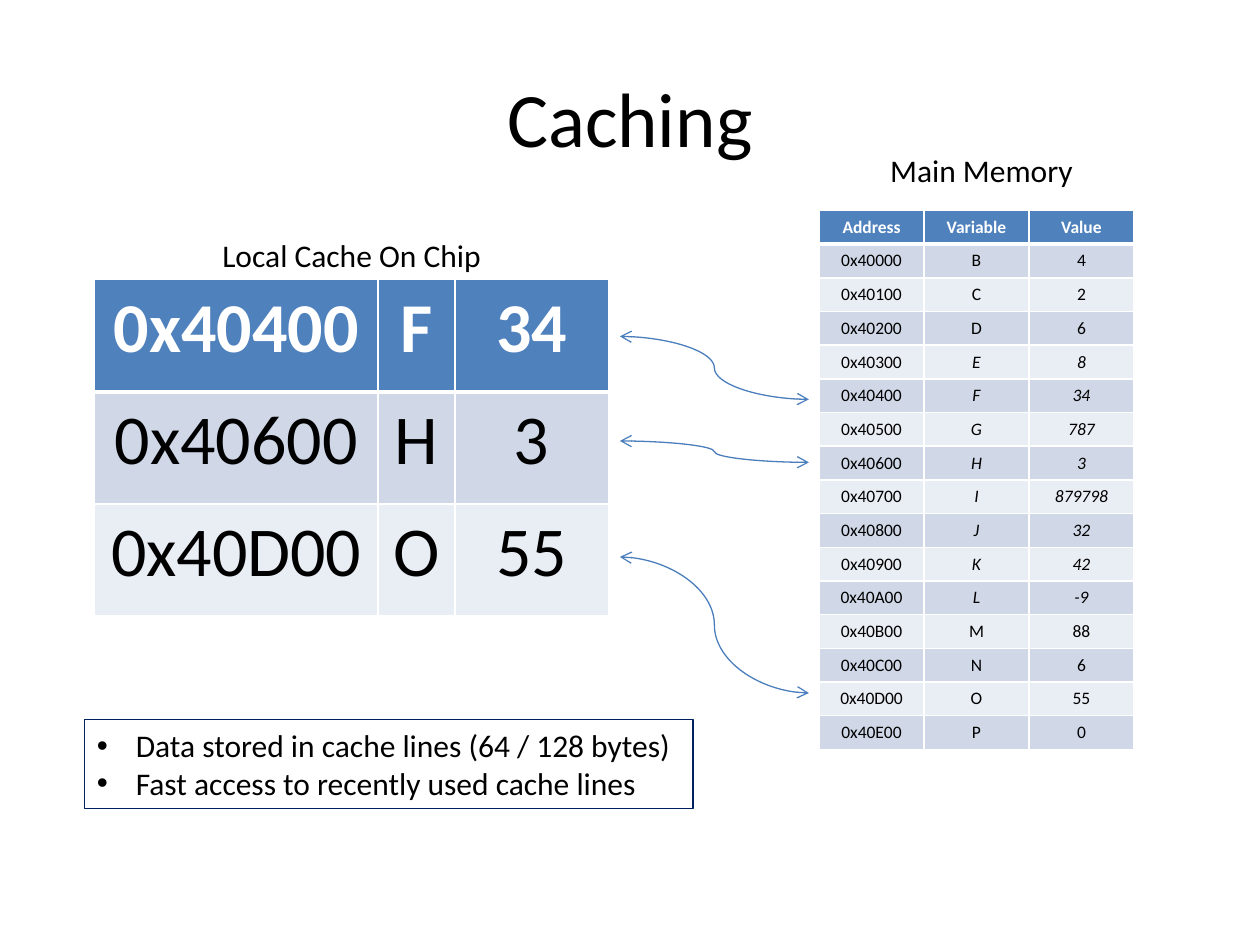
from lxml import etree
from pptx import Presentation
from pptx import util as u
from pptx.dml.color import RGBColor
from pptx.enum import shapes, text
from pptx.oxml import ns

FONT = "Calibri"
BLACK = RGBColor(0x00, 0x00, 0x00)
WHITE = RGBColor(0xFF, 0xFF, 0xFF)
HEADER_BLUE = RGBColor(0x4F, 0x81, 0xBD)
BANDS = (RGBColor(0xD0, 0xD8, 0xE8), RGBColor(0xE9, 0xED, 0xF4))
ARROW_BLUE = RGBColor(0x4B, 0x7E, 0xBC)
NAVY = RGBColor(0x00, 0x20, 0x60)

MEMORY_HEADER = ("Address", "Variable", "Value")
MEMORY_VALUES = (4, 2, 6, 8, 34, 787, 3, 879798, 32, 42, -9, 88, 6, 55, 0)
ITALIC_VARIABLES = "EFGHIJKL"
CACHE_ROWS = [("0x40400", "F", "34"), ("0x40600", "H", "3"), ("0x40D00", "O", "55")]
# Start and end heights of the links from cache lines to memory rows
LINKS = ((2.67, 3.17), (3.5, 3.67), (4.42, 5.5))


def inches(*lengths):
    return [u.Inches(length) for length in lengths]


def format_paragraph(paragraph, size, color=BLACK, bold=False, italic=False,
                     alignment=text.PP_ALIGN.CENTER):
    paragraph.alignment = alignment
    for run in paragraph.runs:
        font = run.font
        font.name, font.size = FONT, u.Pt(size)
        font.bold, font.italic = bold, italic
        font.color.rgb = color


def add_label(slide, box, wording, size):
    frame = slide.shapes.add_textbox(*inches(*box)).text_frame
    frame.word_wrap = True
    frame.vertical_anchor = text.MSO_ANCHOR.MIDDLE
    frame.text = wording
    format_paragraph(frame.paragraphs[0], size)


def set_cell_borders(cell, widths):
    properties = cell._tc.get_or_add_tcPr()
    for side, width in zip("LRTB", widths):
        line = etree.SubElement(properties, ns.qn(f"a:ln{side}"), w=str(u.Pt(width)))
        fill = etree.SubElement(line, ns.qn("a:solidFill"))
        etree.SubElement(fill, ns.qn("a:srgbClr"), val=str(WHITE))


def add_banded_table(slide, box, rows, column_widths, size, italic_variables=""):
    frame = slide.shapes.add_table(len(rows), len(column_widths), *inches(*box))
    table = frame.table
    for column, width in zip(table.columns, column_widths):
        column.width = u.Inches(width)
    for row_index, values in enumerate(rows):
        is_header = row_index == 0
        table.rows[row_index].height = u.Inches(box[3] / len(rows))
        for column_index, value in enumerate(values):
            cell = table.cell(row_index, column_index)
            # A thick rule separates the header from the body
            set_cell_borders(cell, (1, 1, 3 if row_index == 1 else 1, 3 if is_header else 1))
            cell.fill.solid()
            cell.fill.fore_color.rgb = HEADER_BLUE if is_header else BANDS[(row_index - 1) % 2]
            cell.text_frame.text = value
            format_paragraph(cell.text_frame.paragraphs[0], size,
                             WHITE if is_header else BLACK, bold=is_header,
                             italic=column_index > 0 and values[1] in italic_variables)


def add_main_memory(slide, left, top, width, height):
    add_label(slide, (left + 0.25, top - 0.52, 2.08, 0.4), "Main Memory", 18)
    rows = [MEMORY_HEADER] + [
        (f"0x40{index:X}00", chr(ord("B") + index), str(value))
        for index, value in enumerate(MEMORY_VALUES)
    ]
    add_banded_table(slide, (left, top, width, height), rows, [width / 3] * 3, 10,
                     ITALIC_VARIABLES)


def add_local_cache(slide, left, top, width, height):
    add_label(slide, (left + 0.83, top - 0.4, 2.42, 0.4), "Local Cache On Chip", 18)
    add_banded_table(slide, (left, top, width, height), CACHE_ROWS, (2.25, 0.61, 1.22), 40)


def add_links(slide, left, width):
    for start, end in LINKS:
        connector = slide.shapes.add_connector(
            shapes.MSO_CONNECTOR.CURVE, *inches(left, start, left + width, end))
        connector.line.color.rgb = ARROW_BLUE
        connector.line.width = u.Pt(0.75)
        line = connector.line._get_or_add_ln()
        for end_name in ("a:headEnd", "a:tailEnd"):
            etree.SubElement(line, ns.qn(end_name), type="arrow")
        etree.SubElement(connector._element.spPr, ns.qn("a:effectLst"))


def add_notes_box(slide, left, top, width, height):
    shape = slide.shapes.add_shape(shapes.MSO_SHAPE.RECTANGLE,
                                   *inches(left, top, width, height))
    shape.shadow.inherit = False
    shape.fill.background()
    shape.line.color.rgb = NAVY
    shape.line.width = u.Pt(0.75)
    frame = shape.text_frame
    frame.word_wrap = True
    frame.text = ("Data stored in cache lines (64 / 128 bytes)\n"
                  "Fast access to recently used cache lines")
    indent = u.Inches(0.31)
    for paragraph in frame.paragraphs:
        format_paragraph(paragraph, 18, alignment=text.PP_ALIGN.LEFT)
        properties = paragraph._p.get_or_add_pPr()
        properties.set("marL", str(indent))
        properties.set("indent", str(-indent))
        etree.SubElement(properties, ns.qn("a:buFont"), typeface="Arial")
        etree.SubElement(properties, ns.qn("a:buChar"), char="•")


def main():
    presentation = Presentation()
    presentation.slide_width, presentation.slide_height = inches(10, 7.5)
    slide = presentation.slides.add_slide(presentation.slide_layouts[6])

    # Title
    add_label(slide, (0.5, 0.3, 9, 1.25), "Caching", 44)
    # Memory, cache and the links between them
    add_main_memory(slide, 6.5, 1.67, 2.5, 4.27)
    add_local_cache(slide, 0.75, 2.22, 4.08, 2.67)
    add_links(slide, 4.92, 1.5)
    # Explanation
    add_notes_box(slide, 0.67, 5.71, 4.83, 0.71)

    presentation.save("out.pptx")


if __name__ == "__main__":
    main()
